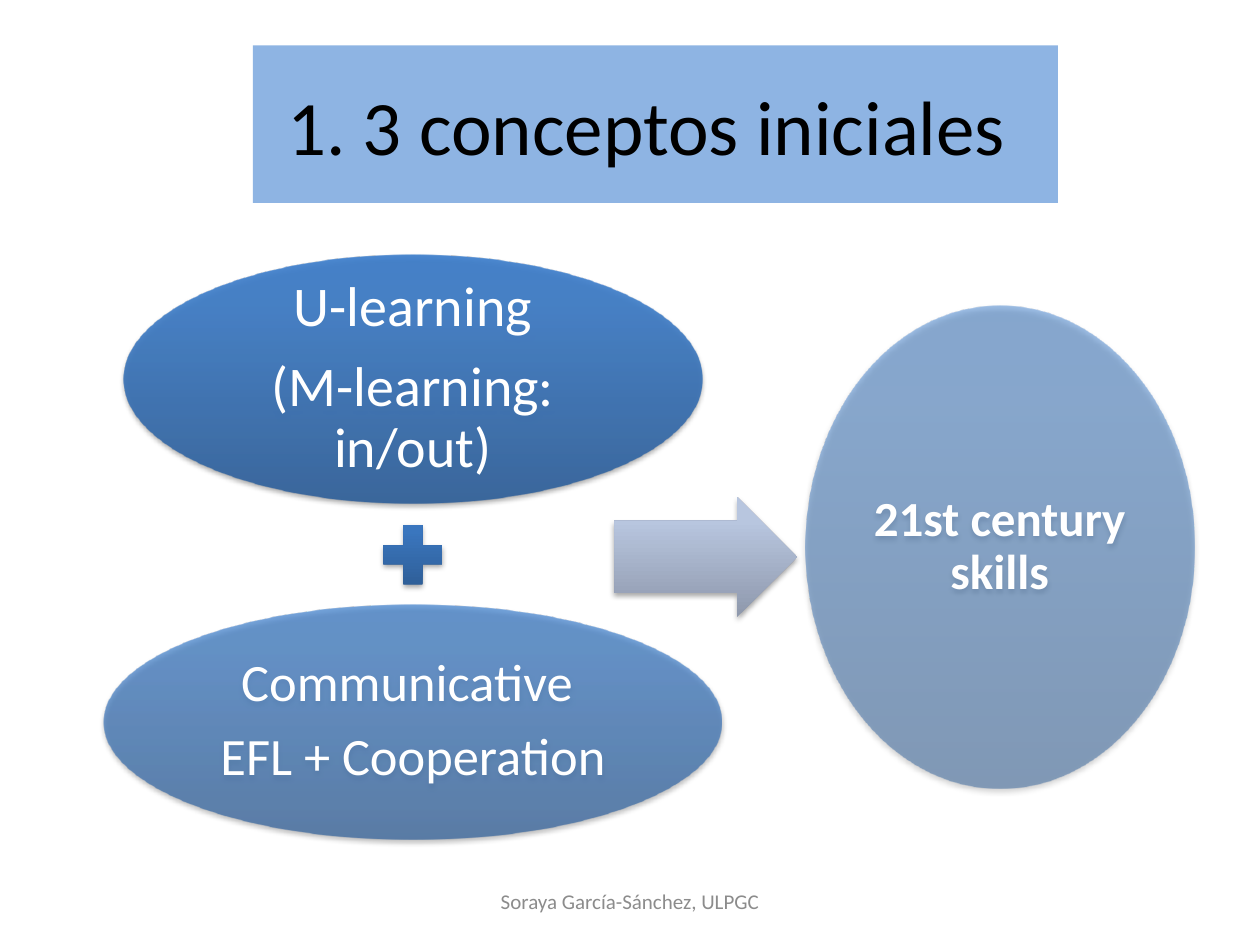
from lxml.etree import SubElement
from pptx import Presentation
from pptx.dml.color import RGBColor
from pptx.enum.shapes import MSO_SHAPE
from pptx.enum.text import MSO_ANCHOR, PP_ALIGN
from pptx.oxml.ns import qn
from pptx.util import Pt

FONT = "Calibri"
BLACK = RGBColor(0x00, 0x00, 0x00)
WHITE = RGBColor(0xFF, 0xFF, 0xFF)
GRAY = RGBColor(0x8C, 0x8C, 0x8C)
TITLE_BLUE = RGBColor(0x8E, 0xB4, 0xE3)
OVAL_BLUES = (RGBColor(0x2F, 0x5F, 0x99), RGBColor(0x3D, 0x7C, 0xC7), RGBColor(0x3A, 0x7C, 0xCB))
PLUS_BLUES = (RGBColor(0x2D, 0x5B, 0x92), RGBColor(0x3A, 0x76, 0xBE), RGBColor(0x38, 0x76, 0xC2))
ARROW_BLUES = (RGBColor(0x8E, 0x98, 0xAC), RGBColor(0xB8, 0xC6, 0xDF), RGBColor(0xB8, 0xC6, 0xE1))
STOPS = (0, 80, 100)


def add_color(parent, color, opacity):
    element = SubElement(parent, qn("a:srgbClr"), val=str(color))
    if opacity < 100:
        SubElement(element, qn("a:alpha"), val=str(opacity * 1000))


def set_gradient(shape, colors, opacity):
    shape.fill.gradient()
    shape.fill.gradient_angle = 90
    stop_list = shape._element.spPr.find(qn("a:gradFill")).find(qn("a:gsLst"))
    for old_stop in list(stop_list):
        stop_list.remove(old_stop)
    for position, color in zip(STOPS, colors):
        stop = SubElement(stop_list, qn("a:gs"), pos=str(position * 1000))
        add_color(stop, color, opacity)


def set_shadow(shape):
    shape.shadow.inherit = False
    effects = shape._element.spPr.find(qn("a:effectLst"))
    shadow = SubElement(effects, qn("a:outerShdw"), blurRad=str(Pt(3.1)), dist=str(Pt(1.8)),
                        dir="5400000", rotWithShape="0")
    add_color(shadow, BLACK, 35)


def write_run(paragraph, text, size, color, bold=False):
    paragraph.alignment = PP_ALIGN.CENTER
    run = paragraph.add_run()
    run.text = text
    run.font.name = FONT
    run.font.size = Pt(size)
    run.font.bold = bold
    run.font.color.rgb = color


def add_glossy_shape(slide, kind, box, colors, opacity=100):
    shape = slide.shapes.add_shape(kind, *map(Pt, box))
    set_gradient(shape, colors, opacity)
    shape.line.fill.background()
    set_shadow(shape)
    return shape


def add_concept(slide, box, opacity, lines, size, bold=False):
    oval = add_glossy_shape(slide, MSO_SHAPE.OVAL, box, OVAL_BLUES, opacity)
    frame = oval.text_frame
    frame.word_wrap = True
    frame.vertical_anchor = MSO_ANCHOR.MIDDLE
    frame.margin_left = frame.margin_right = Pt(3)
    frame.margin_top = frame.margin_bottom = Pt(3)
    for index, line in enumerate(lines):
        paragraph = frame.add_paragraph() if index else frame.paragraphs[0]
        paragraph.line_spacing = 0.9
        paragraph.space_after = Pt(round(size * 0.35))
        write_run(paragraph, line, size, WHITE, bold)


def add_title(slide, box):
    title = slide.shapes.title
    title.left, title.top, title.width, title.height = map(Pt, box)
    title.fill.solid()
    title.fill.fore_color.rgb = TITLE_BLUE
    title.text_frame.vertical_anchor = MSO_ANCHOR.MIDDLE
    write_run(title.text_frame.paragraphs[0], "1. 3 conceptos iniciales ", 44, BLACK)


def add_equation(slide, box):
    left, top, width, height = box
    center = left + 176.5
    add_concept(slide, (center - 165.25, top, 330.5, 142), 90,
                ("U-learning", "(M-learning: in/out)"), 32)
    add_glossy_shape(slide, MSO_SHAPE.MATH_PLUS, (center - 23, top + 148.5, 46, 46), PLUS_BLUES)
    add_concept(slide, (left, top + height - 134, 353, 134), 70,
                ("Communicative ", "EFL + Cooperation"), 30)
    arrow = add_glossy_shape(slide, MSO_SHAPE.RIGHT_ARROW, (left + 291.5, top + 138.5, 104.5, 68.5),
                             ARROW_BLUES)
    arrow.adjustments[0] = 0.6
    arrow.adjustments[1] = 0.5
    add_concept(slide, (left + width - 222.5, top + 29, 222.5, 276), 50,
                ("21st century skills",), 28, True)


def add_footer(slide, box):
    footer = slide.shapes.add_textbox(*map(Pt, box))
    footer.text_frame.word_wrap = True
    footer.text_frame.vertical_anchor = MSO_ANCHOR.MIDDLE
    write_run(footer.text_frame.paragraphs[0], "Soraya García-Sánchez, ULPGC", 12, GRAY)


def main():
    presentation = Presentation()
    presentation.slide_width = Pt(720)
    presentation.slide_height = Pt(540)
    slide = presentation.slides.add_slide(presentation.slide_layouts[5])
    add_title(slide, (144.5, 26, 460, 90))
    add_equation(slide, (59.5, 145.5, 623, 334))
    add_footer(slide, (246, 500.5, 228, 28.75))
    presentation.save("out.pptx")


if __name__ == "__main__":
    main()
